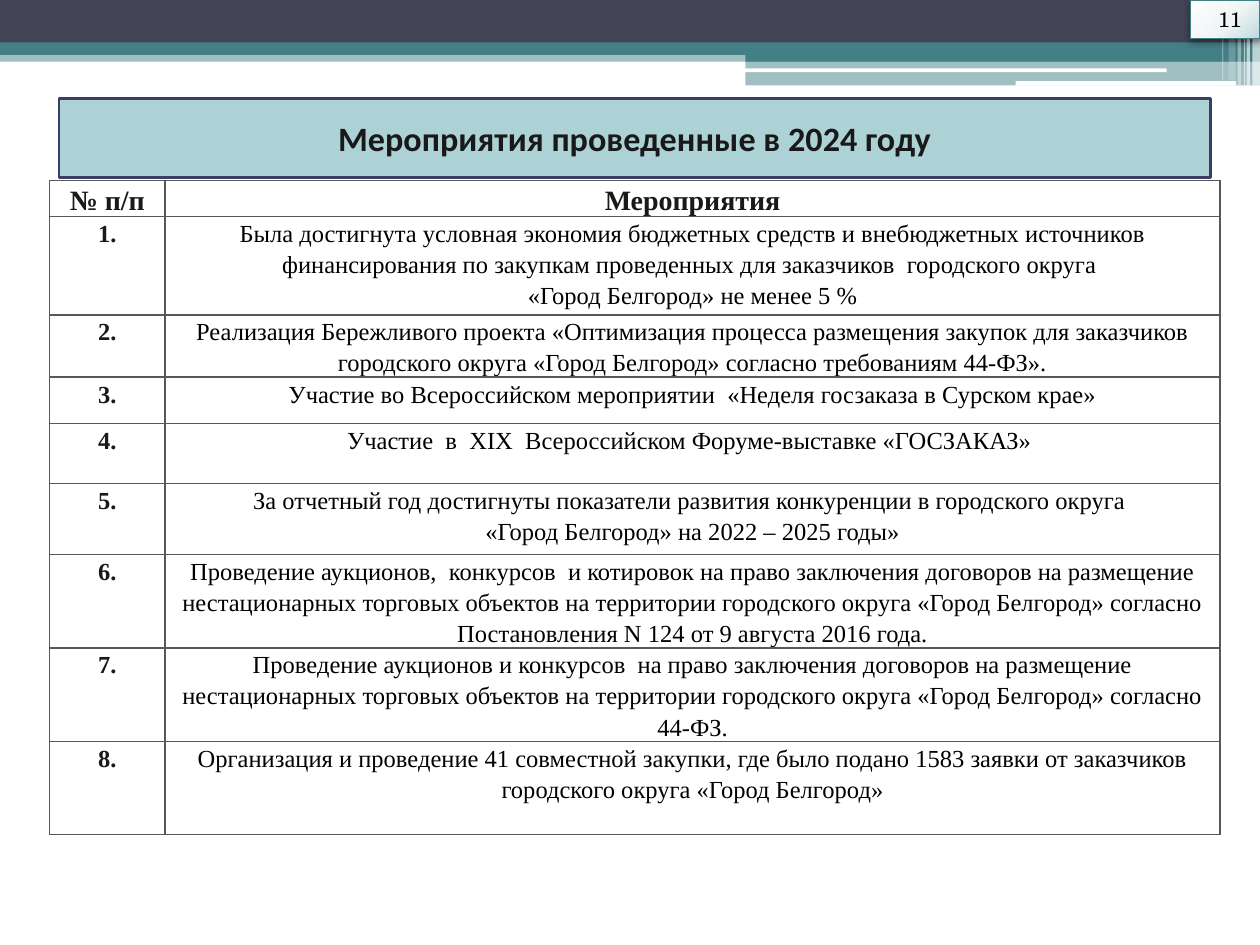
from lxml import etree
from pptx import Presentation
from pptx.dml.color import RGBColor
from pptx.enum.shapes import MSO_SHAPE
from pptx.enum.text import MSO_ANCHOR, MSO_AUTO_SIZE, PP_ALIGN
from pptx.oxml import parse_xml
from pptx.oxml.ns import nsdecls, qn
from pptx.util import Pt

RECT, ROUND = MSO_SHAPE.RECTANGLE, MSO_SHAPE.ROUNDED_RECTANGLE
CENTER, LEFT = PP_ALIGN.CENTER, PP_ALIGN.LEFT
TOP, MIDDLE = MSO_ANCHOR.TOP, MSO_ANCHOR.MIDDLE

WHITE = RGBColor(0xFF, 0xFF, 0xFF)
BLACK = RGBColor(0, 0, 0)
INK = RGBColor(0x19, 0x19, 0x19)
NAVY = RGBColor(0x42, 0x44, 0x56)
TEAL = RGBColor(0x43, 0x80, 0x86)
PALE = RGBColor(0xAD, 0xD2, 0xD6)
OUTLINE = RGBColor(0x3D, 0x3E, 0x66)
GRID = RGBColor(0x58, 0x58, 0x58)

# Header bands and bars: left, top, width, height, shape, colour, opacity %
BANDS = [
    (0, 28.8, 720, 6.5, RECT, TEAL, 50),
    (0, 0, 720, 24.5, RECT, NAVY, 100),
    (0, 24.2, 720, 7.2, RECT, TEAL, 100),
    (426, 28, 294, 7.2, RECT, TEAL, 100),
    (426, 34.9, 294, 14, RECT, TEAL, 50),
    (425.5, 39.1, 241.2, 2.2, ROUND, WHITE, 100),
    (580.3, 46.4, 126, 2.6, ROUND, WHITE, 100),
]
# Vertical stripes at the right edge: left, width, height, opacity %
STRIPES = [
    (715.6, 4.4, 49, 65), (712.3, 2, 49, 65), (710.8, 0.72, 49, 60),
    (707.2, 2, 49, 40), (702, 4, 46, 20), (698.4, 0.72, 46, 30),
]
# Row height and the paragraphs of each activity
ACTIVITIES = [
    (56.3, ["Была достигнута условная экономия бюджетных средств и внебюджетных источников "
            "финансирования по закупкам проведенных для заказчиков  городского округа ",
            "«Город Белгород» не менее 5 %"]),
    (35.2, ["Реализация Бережливого проекта «Оптимизация процесса размещения закупок для "
            "заказчиков городского округа «Город Белгород» согласно требованиям 44-ФЗ»."]),
    (26.5, ["Участие во Всероссийском мероприятии  «Неделя госзаказа в Сурском крае»"]),
    (34.2, ["Участие  в  XIX  Всероссийском Форуме-выставке «ГОСЗАКАЗ» "]),
    (40.7, ["За отчетный год достигнуты показатели развития конкуренции в городского округа ",
            "«Город Белгород» на 2022 – 2025 годы»"]),
    (53.4, ["Проведение аукционов,  конкурсов  и котировок на право заключения договоров на "
            "размещение нестационарных торговых объектов на территории городского округа "
            "«Город Белгород» согласно Постановления N 124 от 9 августа 2016 года."]),
    (53.4, ["Проведение аукционов и конкурсов  на право заключения договоров на размещение "
            "нестационарных торговых объектов на территории городского округа "
            "«Город Белгород» согласно 44-ФЗ."]),
    (53.2, ["Организация и проведение 41 совместной закупки, где было подано 1583 заявки от "
            "заказчиков городского округа «Город Белгород»"]),
]


class Deck:
    body_font = "Times New Roman"
    title_font = "Calibri"
    number_font = "TeX Gyre Schola"

    def __init__(self, width, height):
        self.prs = Presentation()
        self.prs.slide_width, self.prs.slide_height = Pt(width), Pt(height)
        self.s = self.prs.slides.add_slide(self.prs.slide_layouts[5])

    def run(self, p, text, size, font, color=BLACK, bold=False, align=CENTER):
        p.alignment = align
        r = p.add_run()
        r.text = text
        r.font.size, r.font.name, r.font.bold = Pt(size), font, bold
        r.font.color.rgb = color

    def outline(self, sp, color, width):
        sp.line.color.rgb = color
        sp.line.width = Pt(width)

    def shape(self, x, y, w, h, kind=RECT, color=WHITE, opacity=100):
        sp = self.s.shapes.add_shape(kind, Pt(x), Pt(y), Pt(w), Pt(h))
        sp.shadow.inherit = False
        sp.fill.solid()
        sp.fill.fore_color.rgb = color
        sp.line.fill.background()
        if opacity < 100:
            clr = sp._element.spPr.find(qn("a:solidFill"))[0]
            etree.SubElement(clr, qn("a:alpha"), val=str(opacity * 1000))
        return sp

    def title(self, text, x, y, w, h):
        sp = self.s.shapes.title
        sp.left, sp.top, sp.width, sp.height = Pt(x), Pt(y), Pt(w), Pt(h)
        sp._element.spPr.append(parse_xml(
            f'<a:prstGeom {nsdecls("a")} prst="roundRect"><a:avLst/></a:prstGeom>'))
        sp.fill.solid()
        sp.fill.fore_color.rgb = PALE
        self.outline(sp, OUTLINE, 1.5)
        tf = sp.text_frame
        tf.word_wrap, tf.auto_size = True, MSO_AUTO_SIZE.NONE
        tf.vertical_anchor = MIDDLE
        self.run(tf.paragraphs[0], text, 19.5, self.title_font, INK, True)

    def page_number(self, text, x, y, w, h):
        sp = self.shape(x, y, w, h)
        self.outline(sp, TEAL, 0.75)
        spPr = sp._element.spPr
        stops = "".join(f'<a:gs pos="{pos * 1000}"><a:srgbClr val="{c}"/></a:gs>'
                        for pos, c in ((0, "FEFEFE"), (55, "F0F6F6"), (100, "BFD9DD")))
        spPr.replace(spPr.find(qn("a:solidFill")), parse_xml(
            f'<a:gradFill {nsdecls("a")} rotWithShape="1"><a:gsLst>{stops}</a:gsLst>'
            '<a:path path="circle"><a:fillToRect l="-40000" t="-90000" r="140000" b="190000"/>'
            '</a:path></a:gradFill>'))
        spPr.find(qn("a:effectLst")).append(parse_xml(
            f'<a:outerShdw {nsdecls("a")} blurRad="{Pt(4.1)}" dist="{Pt(2)}" dir="5400000" '
            'rotWithShape="0"><a:srgbClr val="000000"><a:alpha val="40000"/></a:srgbClr>'
            '</a:outerShdw>'))
        tf = sp.text_frame
        tf.vertical_anchor = TOP
        p = tf.paragraphs[0]
        p.space_before = Pt(3)
        p._p.get_or_add_pPr().set("marL", str(Pt(8.6)))
        self.run(p, text, 12, self.number_font, align=LEFT)

    def cell(self, cell, paragraphs, size, color, bold):
        cell.margin_left = cell.margin_right = Pt(5)
        cell.margin_top = cell.margin_bottom = 0
        cell.fill.background()
        tcPr = cell._tc.get_or_add_tcPr()
        for i, side in enumerate("LRTB"):
            tcPr.insert(i, parse_xml(
                f'<a:ln{side} {nsdecls("a")} w="{Pt(1)}"><a:solidFill>'
                f'<a:srgbClr val="{GRID}"/></a:solidFill></a:ln{side}>'))
        tf = cell.text_frame
        for i, text in enumerate(paragraphs):
            p = tf.add_paragraph() if i else tf.paragraphs[0]
            p.line_spacing = 1.15
            self.run(p, text, size, self.body_font, color, bold)

    def table(self, x, y, widths, header_height, header, rows):
        heights = [header_height] + [height for height, _ in rows]
        tbl = self.s.shapes.add_table(len(heights), len(widths), Pt(x), Pt(y),
                                      Pt(sum(widths)), Pt(sum(heights))).table
        tbl.first_row = tbl.horz_banding = False
        for col, width in zip(tbl.columns, widths):
            col.width = Pt(width)
        for row, height in zip(tbl.rows, heights):
            row.height = Pt(height)
        for i, text in enumerate(header):
            self.cell(tbl.cell(0, i), [text], 16, INK, True)
        for n, (_, paragraphs) in enumerate(rows, 1):
            self.cell(tbl.cell(n, 0), [f"{n}."], 14, INK, True)
            self.cell(tbl.cell(n, 1), paragraphs, 14, BLACK, False)


def main():
    deck = Deck(720, 540)
    # Header decoration
    for band in BANDS:
        deck.shape(*band)
    for x, w, h, opacity in STRIPES:
        deck.shape(x, 0, w, h, opacity=opacity)
    # Activities table
    deck.table(28.2, 103.1, [66.2, 602.8], 20.6, ["№ п/п", "Мероприятия"], ACTIVITIES)
    # Title and page number
    deck.title("Мероприятия проведенные в 2024 году", 33.8, 56.2, 658.1, 45.2)
    deck.page_number("11", 680.4, 0, 39.6, 21.9)
    deck.prs.save("out.pptx")


if __name__ == "__main__":
    main()
